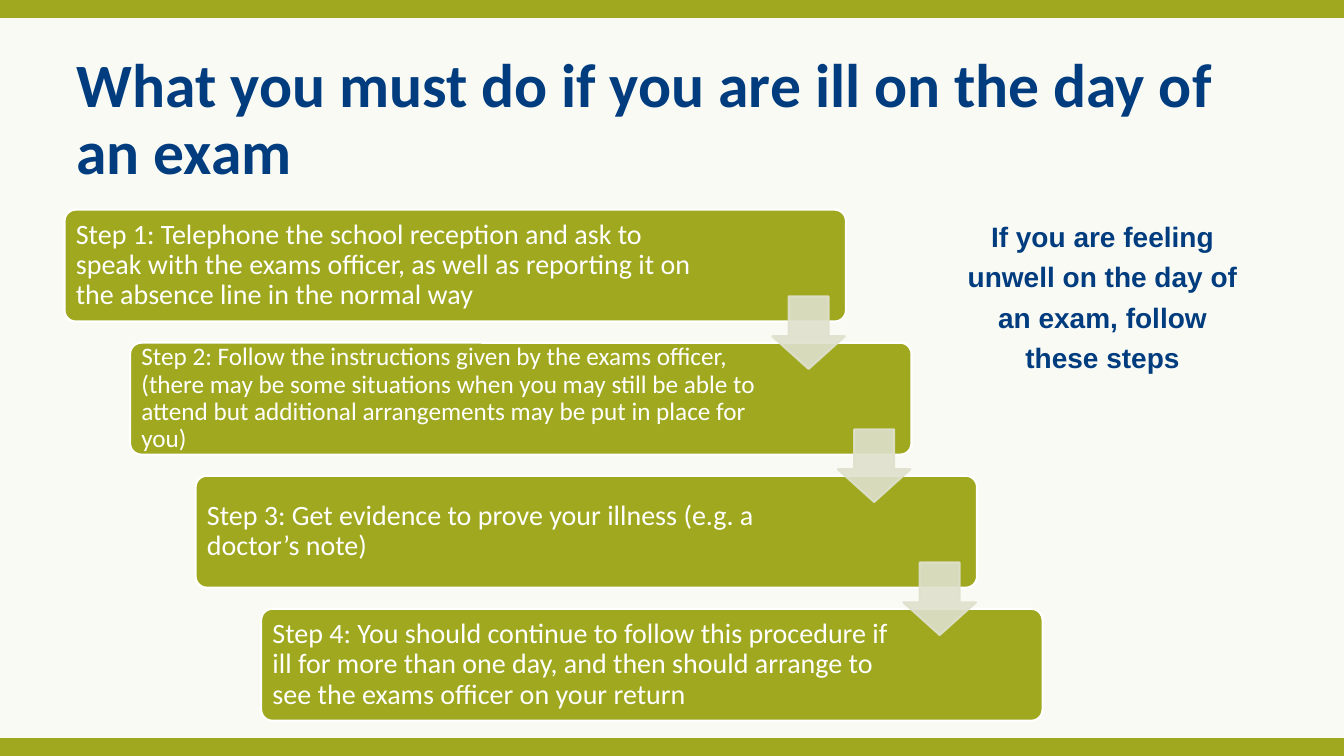
from lxml.etree import SubElement
from pptx import Presentation
from pptx.dml.color import RGBColor
from pptx.enum.shapes import MSO_CONNECTOR, MSO_SHAPE
from pptx.enum.text import MSO_ANCHOR, MSO_AUTO_SIZE, PP_ALIGN
from pptx.oxml.ns import qn
from pptx.util import Inches, Pt

COLOURS = {
    "paper": "FAFAF5",
    "olive": "9FA81E",
    "white": "FFFFFF",
    "navy": "003C7E",
    "arrow": "DFE1CD",
}

# Text, size in points, right inset in inches
STEPS = [
    ("Step 1: Telephone the school reception and ask to speak with the exams "
     "officer, as well as reporting it on the absence line in the normal way", 20, 1.32),
    ("Step 2: Follow the instructions given by the exams officer, (there may be "
     "some situations when you may still be able to attend but additional "
     "arrangements may be put in place for you)", 18, 1.45),
    ("Step 3: Get evidence to prove your illness (e.g. a doctor’s note)", 20, 1.45),
    ("Step 4: You should continue to follow this procedure if ill for more than "
     "one day, and then should arrange to see the exams officer on your return", 20, 1.45),
]
STEP_RIGHT, STEP_DOWN = 0.65, 1.32


class ExamSlide:
    def __init__(self, slide):
        self.slide = slide

    def colour(self, name):
        return RGBColor.from_string(COLOURS[name])

    def background(self, colour):
        fill = self.slide.background.fill
        fill.solid()
        fill.fore_color.rgb = self.colour(colour)

    def set_text(self, frame, text, font, size, colour, bold=False,
                 align=PP_ALIGN.LEFT, spacing=0.9, anchor=MSO_ANCHOR.TOP):
        frame.text = text
        frame.word_wrap = True
        frame.auto_size = MSO_AUTO_SIZE.NONE
        frame.vertical_anchor = anchor
        paragraph = frame.paragraphs[0]
        paragraph.alignment = align
        paragraph.line_spacing = spacing
        paragraph.space_before = Pt(0)
        run_font = paragraph.runs[0].font
        run_font.name, run_font.size, run_font.bold = font, Pt(size), bold
        run_font.color.rgb = self.colour(colour)

    def placeholder(self, index, box, text, **style):
        holder = self.slide.placeholders[index]
        holder.left, holder.top, holder.width, holder.height = map(Inches, box)
        self.set_text(holder.text_frame, text, **style)
        return holder

    def band(self, y):
        line = self.slide.shapes.add_connector(
            MSO_CONNECTOR.STRAIGHT, Inches(0), Inches(y), Inches(13.33), Inches(y))
        line.line.color.rgb = self.colour("olive")
        line.line.width = Pt(13)
        SubElement(line._element.spPr, qn("a:effectLst"))

    def shape(self, kind, box, adjustments, fill, line):
        shape = self.slide.shapes.add_shape(kind, *map(Inches, box))
        shape.shadow.inherit = False
        for i, value in enumerate(adjustments):
            shape.adjustments[i] = value
        shape.fill.solid()
        shape.fill.fore_color.rgb = self.colour(fill)
        shape.line.color.rgb = self.colour(line)
        shape.line.width = Pt(1.5)
        return shape

    def step(self, x, y, text, size, right_inset):
        card = self.shape(MSO_SHAPE.ROUNDED_RECTANGLE, (x, y, 7.75, 1.11),
                          [0.1], "olive", "white")
        frame = card.text_frame
        frame.margin_left = frame.margin_top = frame.margin_bottom = Inches(0.08)
        frame.margin_right = Inches(right_inset)
        self.set_text(frame, text, "Calibri", size, "white", anchor=MSO_ANCHOR.MIDDLE)

    def arrow(self, x, y):
        arrow = self.shape(MSO_SHAPE.DOWN_ARROW, (x, y, 0.72, 0.72),
                           [0.55, 0.45], "arrow", "arrow")
        for colour in arrow._element.spPr.iter(qn("a:srgbClr")):
            SubElement(colour, qn("a:alpha")).set("val", "90000")


def main():
    deck = Presentation()
    deck.slide_width, deck.slide_height = Inches(13.33), Inches(7.5)
    page = ExamSlide(deck.slides.add_slide(deck.slide_layouts[1]))

    # Background and edge bands
    page.background("paper")
    for y in (0.09, 7.41):
        page.band(y)

    # Title and introduction
    page.placeholder(0, (0.66, 0.49, 12.03, 0.92),
                     "What you must do if you are ill on the day of an exam",
                     font="Calibri", size=44, colour="navy", bold=True)
    intro = page.placeholder(1, (9.4, 2.06, 3.07, 1.53),
                             "If you are feeling unwell on the day of an exam, "
                             "follow these steps",
                             font="Arial", size=20, colour="navy", bold=True,
                             align=PP_ALIGN.CENTER, spacing=1.2)
    properties = intro.text_frame.paragraphs[0]._p.get_or_add_pPr()
    properties.set("marL", "0")
    properties.set("indent", "0")
    SubElement(properties, qn("a:buNone"))

    # Staircase of steps, then the arrows between them
    for i, (text, size, right_inset) in enumerate(STEPS):
        page.step(0.64 + i * STEP_RIGHT, 2.08 + i * STEP_DOWN, text, size, right_inset)
    for i in range(len(STEPS) - 1):
        page.arrow(7.66 + i * STEP_RIGHT, 2.94 + i * STEP_DOWN)

    deck.save("out.pptx")


if __name__ == "__main__":
    main()
